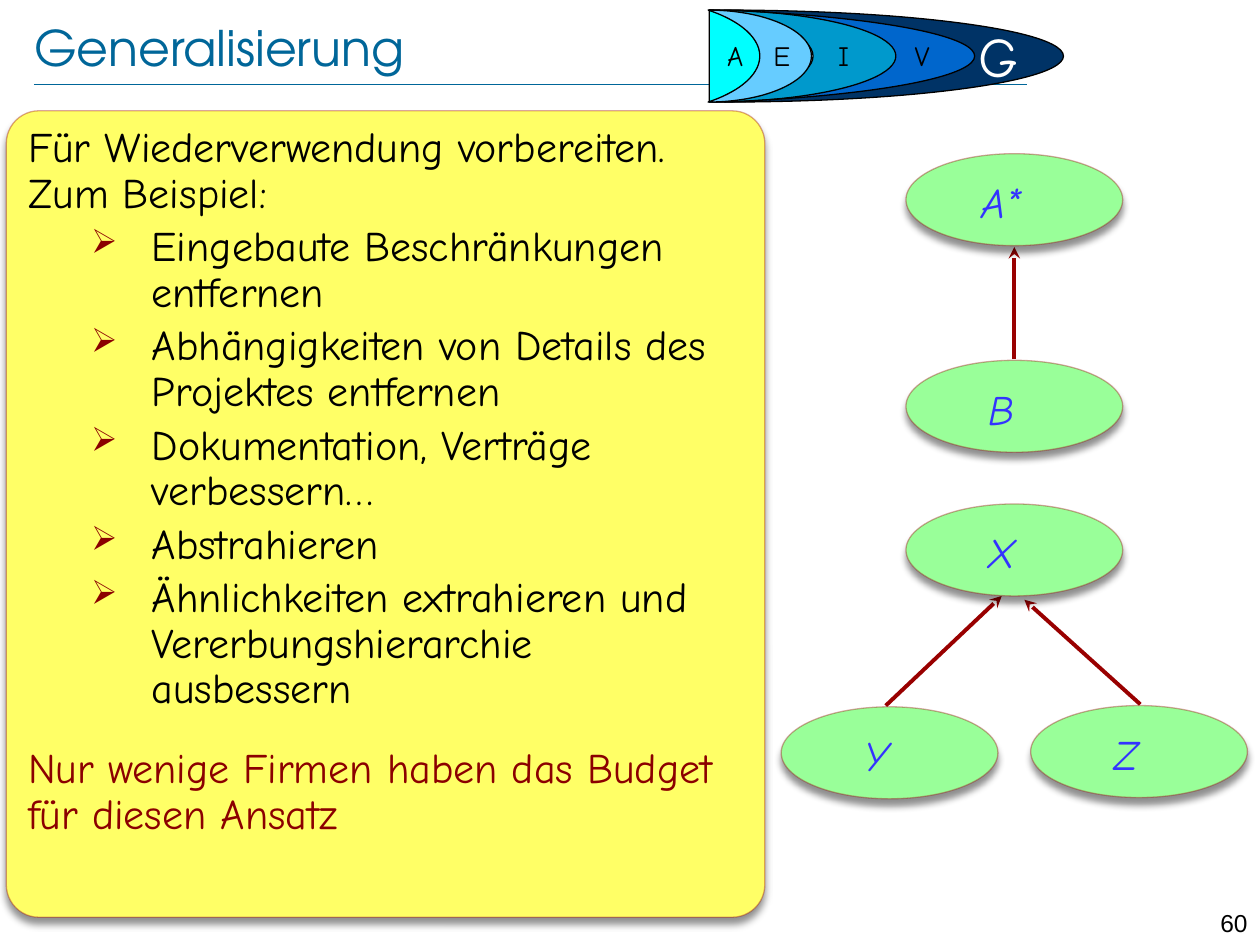
from dataclasses import dataclass
from typing import NamedTuple

from lxml import etree
from pptx import Presentation
from pptx.dml.color import RGBColor
from pptx.enum import shapes, text
from pptx.oxml.ns import qn
from pptx.util import Inches, Pt

KIND = shapes.MSO_SHAPE
ALIGN = text.PP_ALIGN


@dataclass(frozen=True)
class Theme:
    head: str = "TeX Gyre Adventor"
    hand: str = "Comic Neue"
    plain: str = "Arial"
    blue: str = "006699"
    red: str = "990000"
    dark: str = "8B0000"
    panel: str = "FFFF66"
    node: str = "99FF99"
    label: str = "3333FF"
    black: str = "000000"
    white: str = "FFFFFF"
    title: int = 28
    body: int = 24
    phase: int = 16
    focus: int = 32
    page: int = 14


class Node(NamedTuple):
    name: str
    x: float
    y: float


class Arrow(NamedTuple):
    x1: float
    y1: float
    x2: float
    y2: float


class Moon(NamedTuple):
    x: float
    w: float
    adj: float
    fill: str


class Mark(NamedTuple):
    name: str
    x: float
    y: float
    w: float
    h: float
    size: int
    color: str


T = Theme()
NODES = [Node("B", 7.19, 2.86), Node("A*", 7.19, 1.22), Node("Y", 6.2, 5.61),
         Node("X", 7.19, 4), Node("Z", 8.18, 5.6)]
ARROWS = [Arrow(7.03, 5.6, 7.95, 4.73), Arrow(9.05, 5.59, 8.13, 4.76),
          Arrow(8.05, 2.85, 8.05, 1.96)]
BACK = Moon(5.63, 2.11, 0.302, "0066CC")
FRONT = [Moon(5.63, 1.48, 0.444, "0099CC"), Moon(5.62, 0.82, 0.5, "66CCFF"),
         Moon(5.75, 2.69, 0.262, "003366")]
MARKS = [
    *(Mark(n, x, 0.26, w, 0.37, T.phase, T.black) for n, x, w in
      [("A", 5.54, 0.59), ("E", 5.91, 0.59), ("I", 6.4, 0.59), ("V", 7.16, 0.31)]),
    Mark("G", 7.66, 0.12, 0.53, 0.63, T.focus, T.white),
]
INTRO = "Für Wiederverwendung vorbereiten. Zum Beispiel:"
STEPS = [
    "Eingebaute Beschränkungen entfernen",
    "Abhängigkeiten von Details des Projektes entfernen",
    "Dokumentation, Verträge verbessern…",
    "Abstrahieren",
    "Ähnlichkeiten extrahieren und Vererbungshierarchie ausbessern",
]
CLOSE = "Nur wenige Firmen haben das Budget für diesen Ansatz"


def rgb(code: str) -> RGBColor:
    return RGBColor.from_string(code)


def sub(parent, tag: str, **attrs):
    return etree.SubElement(parent, qn(tag), {k: str(v) for k, v in attrs.items()})


def style(para, font: str, size: int, color: str, italic: bool = False) -> None:
    para.font.name, para.font.size = font, Pt(size)
    para.font.color.rgb = rgb(color)
    if italic:
        para.font.italic = True


def write(slide, words: str, x: float, y: float, w: float, h: float, font: str,
          size: int, color: str, align=ALIGN.CENTER, inset=None,
          italic: bool = False, anchor=text.MSO_ANCHOR.TOP) -> None:
    box = slide.shapes.add_textbox(Inches(x), Inches(y), Inches(w), Inches(h))
    frame = box.text_frame
    frame.word_wrap, frame.vertical_anchor = True, anchor
    if inset is not None:
        frame.margin_left = frame.margin_right = Inches(inset)
        frame.margin_top = frame.margin_bottom = Inches(inset)
    para = frame.paragraphs[0]
    para.text, para.alignment = words, align
    style(para, font, size, color, italic)


def paint(shape, fill: str, line: str = T.black) -> None:
    shape.shadow.inherit = False
    shape.fill.solid()
    shape.fill.fore_color.rgb = rgb(fill)
    shape.line.color.rgb = rgb(line)
    shape.line.width = Pt(0.75)


def raised(slide, kind, x: float, y: float, w: float, h: float, fill: str):
    """Shape with a faint red outline and a soft shadow below it."""
    shape = slide.shapes.add_shape(kind, Inches(x), Inches(y), Inches(w), Inches(h))
    paint(shape, fill, T.red)
    props = shape._element.spPr
    sub(props.find(".//" + qn("a:ln")).find(".//" + qn("a:srgbClr")),
        "a:alpha", val=34000)
    cast = sub(props.find(qn("a:effectLst")), "a:outerShdw", blurRad=Pt(4),
               dist=Pt(4), dir=5400000, rotWithShape=0)
    sub(sub(cast, "a:srgbClr", val=T.black), "a:alpha", val=43000)
    return shape


def rule(slide, a: Arrow, color: str, width: float, tip: bool = False) -> None:
    line = slide.shapes.add_connector(
        shapes.MSO_CONNECTOR.STRAIGHT, *(Inches(v) for v in a))
    line.line.color.rgb, line.line.width = rgb(color), Pt(width)
    if tip:
        sub(line.line._get_or_add_ln(), "a:tailEnd", type="stealth")
    sub(line._element.spPr, "a:effectLst")


def node(slide, n: Node) -> None:
    raised(slide, KIND.OVAL, n.x, n.y, 1.72, 0.73, T.node)
    write(slide, n.name, n.x + 0.31, n.y + 0.14, 0.89, 0.48, T.hand, T.body,
          T.label, inset=0.04, italic=True)


def moon(slide, m: Moon) -> None:
    shape = slide.shapes.add_shape(
        KIND.MOON, Inches(m.x), Inches(0.08), Inches(m.w), Inches(0.73))
    shape.rotation, shape.adjustments[0] = 180, m.adj
    paint(shape, m.fill)


def bow(slide) -> None:
    """Innermost phase: a curve mirrored about its middle."""
    top = [(5.63, 0.08), (5.72, 0.11), (5.81, 0.16), (5.89, 0.2), (5.95, 0.26),
           (5.99, 0.31), (6.02, 0.36), (6.03, 0.41)]
    pts = [(Inches(x), Inches(y)) for x, y in
           top + [(x, 0.89 - y) for x, y in reversed(top)]]
    pen = slide.shapes.build_freeform(*pts[0])
    pen.add_line_segments(pts[1:], close=True)
    paint(pen.convert_to_shape(), "00FFFF")


def panel(slide) -> None:
    box = raised(slide, KIND.ROUNDED_RECTANGLE, 0.05, 0.88, 6.02, 6.4, T.panel)
    box.adjustments[0] = 0.043
    frame = box.text_frame
    frame.word_wrap, frame.vertical_anchor = True, text.MSO_ANCHOR.TOP
    for i, words in enumerate([INTRO, *STEPS, CLOSE]):
        para = frame.paragraphs[0] if i == 0 else frame.add_paragraph()
        para.text, para.alignment, para.line_spacing = words, ALIGN.LEFT, 0.9
        if i:
            para.space_before = Pt(20 if words == CLOSE else 4.8)
        if words in STEPS:
            para.level = 1
            props = para._p.get_or_add_pPr()
            props.set("marL", str(Inches(0.98)))
            props.set("indent", str(Inches(-0.48)))
            sub(sub(props, "a:buClr"), "a:srgbClr", val=T.dark)
            sub(props, "a:buSzPct", val=80000)
            sub(props, "a:buChar", char="➢")
        style(para, T.hand, T.body, T.dark if words == CLOSE else T.black)


def main() -> None:
    deck = Presentation()
    deck.slide_width, deck.slide_height = Inches(10), Inches(7.5)
    slide = deck.slides.add_slide(deck.slide_layouts[6])

    # Title, rule and page number
    rule(slide, Arrow(0.27, 0.67, 8.15, 0.67), T.blue, 0.25)
    write(slide, "60", 9.45, 7.16, 0.55, 0.24, T.plain, T.page, T.black, ALIGN.RIGHT)
    write(slide, "Generalisierung", 0.27, 0.13, 8.69, 0.48, T.head, T.title, T.blue,
          ALIGN.LEFT, inset=0, anchor=text.MSO_ANCHOR.MIDDLE)

    # Text panel
    panel(slide)

    # Class hierarchies
    for a in ARROWS:
        rule(slide, a, T.red, 2.25, tip=True)
    for n in NODES:
        node(slide, n)

    # Phase emblem
    moon(slide, BACK)
    bow(slide)
    for m in FRONT:
        moon(slide, m)
    for k in MARKS:
        write(slide, k.name, k.x, k.y, k.w, k.h, T.hand, k.size, k.color)

    deck.save("out.pptx")


if __name__ == "__main__":
    main()
